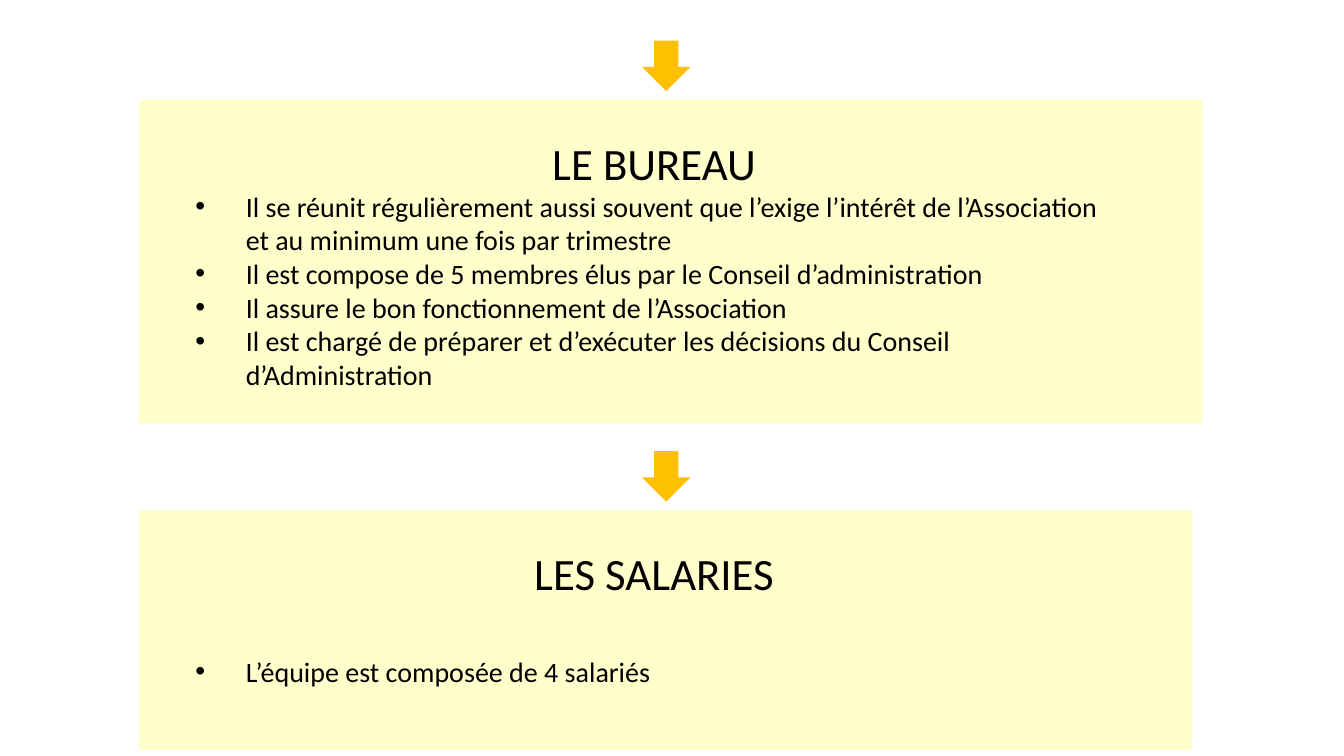
from lxml import etree
from pptx import Presentation
from pptx.dml.color import RGBColor
from pptx.enum import shapes, text
from pptx.oxml import ns
from pptx.util import Pt

# Content: title, panel (top, width, height), text height, gap under title, bullets
SECTIONS = [
    ("LE BUREAU", (71.3, 759.6, 231.1), 191.5, 0, [
        "Il se réunit régulièrement aussi souvent que l’exige l’intérêt de "
        "l’Association et au minimum une fois par trimestre",
        "Il est compose de 5 membres élus par le Conseil d’administration",
        "Il assure le bon fonctionnement de l’Association",
        "Il est chargé de préparer et d’exécuter les décisions du Conseil "
        "d’Administration",
    ]),
    ("LES SALARIES", (364.5, 752.4, 171.4), 108.7, 39, [
        "L’équipe est composée de 4 salariés",
    ]),
]
COLORS = {"panel": "FFFFCC", "arrow": "FFC000", "text": "000000"}
FONT = "Calibri"
PANEL_LEFT = 99.4
ARROW_LEFT, ARROW_WIDTH, ARROW_HEIGHT, ARROW_RISE = 458.6, 34.6, 36, 42.2
TEXT_LEFT, TEXT_WIDTH, TEXT_DROP = 132.5, 669.6, 22
INDENT = 36

deck = Presentation()
deck.slide_width, deck.slide_height = Pt(960), Pt(540)
page = deck.slides.add_slide(deck.slide_layouts[6])


def add_block(kind, left, top, width, height, color):
    block = page.shapes.add_shape(kind, Pt(left), Pt(top), Pt(width), Pt(height))
    block.shadow.inherit = False
    block.fill.solid()
    block.fill.fore_color.rgb = RGBColor.from_string(COLORS[color])
    block.line.fill.background()


def add_span(para, words, size):
    span = para.add_run()
    span.text = words
    span.font.name = FONT
    span.font.size = Pt(size)
    span.font.color.rgb = RGBColor.from_string(COLORS["text"])


def add_bullet(para):
    props = para._p.get_or_add_pPr()
    props.set("marL", str(Pt(INDENT)))
    props.set("indent", str(-Pt(INDENT)))
    etree.SubElement(props, ns.qn("a:buFont"), typeface="Arial")
    etree.SubElement(props, ns.qn("a:buChar"), char="•")


for title, (top, width, height), text_height, gap, bullets in SECTIONS:
    # Panel and the arrow leading to it
    add_block(shapes.MSO_SHAPE.RECTANGLE, PANEL_LEFT, top, width, height, "panel")
    add_block(shapes.MSO_SHAPE.DOWN_ARROW, ARROW_LEFT, top - ARROW_RISE,
              ARROW_WIDTH, ARROW_HEIGHT, "arrow")

    # Title and bullets
    box = page.shapes.add_textbox(Pt(TEXT_LEFT), Pt(top + TEXT_DROP),
                                  Pt(TEXT_WIDTH), Pt(text_height))
    frame = box.text_frame
    frame.word_wrap = True
    frame.auto_size = text.MSO_AUTO_SIZE.SHAPE_TO_FIT_TEXT
    heading = frame.paragraphs[0]
    heading.alignment = text.PP_ALIGN.CENTER
    heading.space_after = Pt(gap)
    add_span(heading, title, 32)
    for words in bullets:
        para = frame.add_paragraph()
        add_bullet(para)
        add_span(para, words, 20)

deck.save("out.pptx")
